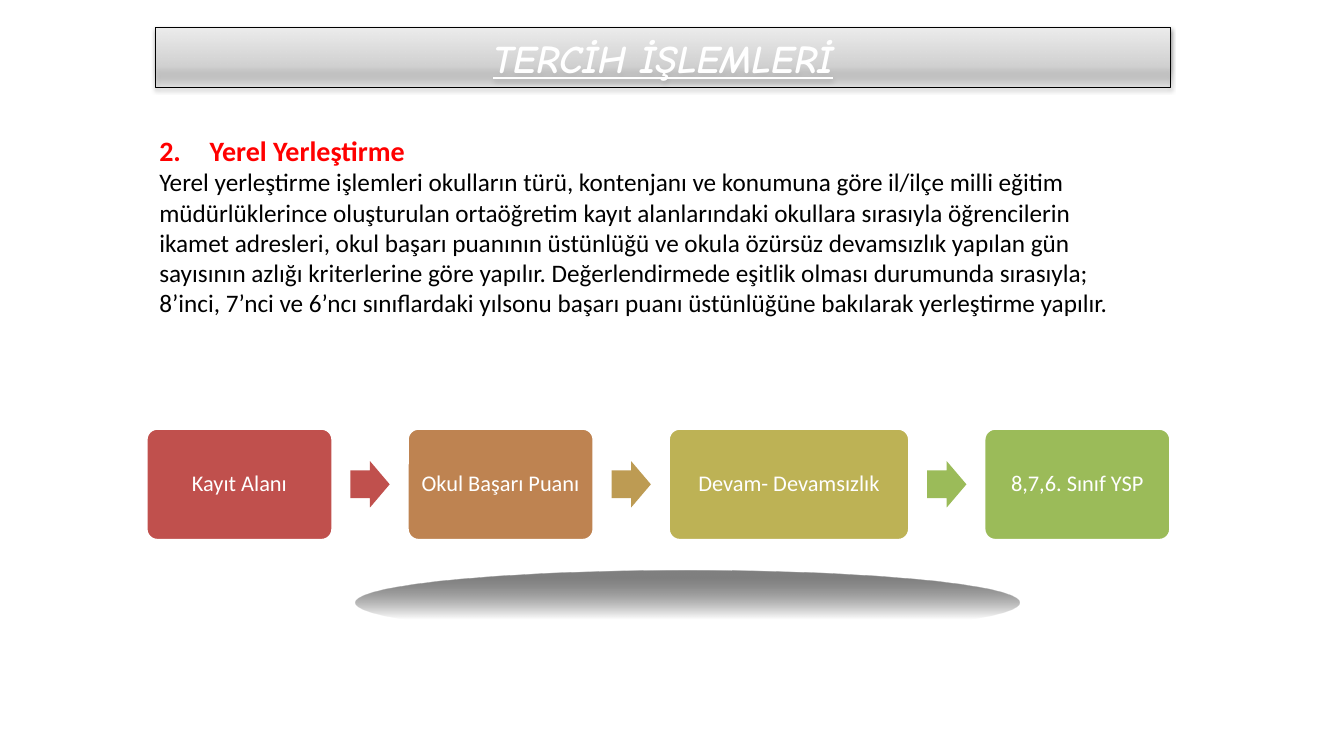
from dataclasses import dataclass

from pptx import Presentation
from pptx.dml.color import RGBColor
from pptx.enum.shapes import MSO_SHAPE
from pptx.enum.text import MSO_ANCHOR, MSO_AUTO_SIZE, PP_ALIGN
from pptx.oxml import parse_xml
from pptx.oxml.ns import nsdecls
from pptx.util import Inches, Pt

ROUND = MSO_SHAPE.ROUNDED_RECTANGLE
ARROW = MSO_SHAPE.RIGHT_ARROW
OVAL = MSO_SHAPE.OVAL
CENTER, LEFT = PP_ALIGN.CENTER, PP_ALIGN.LEFT
MIDDLE, TOP = MSO_ANCHOR.MIDDLE, MSO_ANCHOR.TOP
FIXED = MSO_AUTO_SIZE.NONE

HEADING = "Yerel Yerleştirme"
DETAIL = (
    "Yerel yerleştirme işlemleri okulların türü, kontenjanı ve konumuna göre "
    "il/ilçe milli eğitim müdürlüklerince oluşturulan ortaöğretim kayıt "
    "alanlarındaki okullara sırasıyla öğrencilerin ikamet adresleri, okul başarı "
    "puanının üstünlüğü ve okula özürsüz devamsızlık yapılan gün sayısının azlığı "
    "kriterlerine göre yapılır. Değerlendirmede eşitlik olması durumunda sırasıyla; "
    "8’inci, 7’nci ve 6’ncı sınıflardaki yılsonu başarı puanı üstünlüğüne "
    "bakılarak yerleştirme yapılır."
)
# label, width, box colour, colour of the arrow that follows
STEPS = [
    ("Kayıt Alanı", 1.85, "C0504D", "C0504D"),
    ("Okul Başarı Puanı", 1.85, "BE8351", "BD9B53"),
    ("Devam- Devamsızlık", 2.39, "BDB255", "9BBB59"),
    ("8,7,6. Sınıf YSP", 1.85, "9BBB59", None),
]


@dataclass(frozen=True)
class Theme:
    font: str = "Calibri"
    fancy: str = "Comic Neue"
    white: str = "FFFFFF"
    black: str = "000000"
    red: str = "FF0000"
    title: int = 28
    head: int = 20
    text: int = 18
    label: int = 16
    # gradient stops: position, colour, opacity in percent
    banner: tuple = ((0, "BDBDBD", 7), (35, "D1D1D1", 100), (100, "EEEEEE", 100))
    glow: tuple = ((11, "808080", 100), (76, "2B2B2B", 0))


def rgb(code):
    return RGBColor.from_string(code)


def node(tag, attrs="", inner=""):
    return parse_xml(f'<a:{tag} {nsdecls("a")} {attrs}>{inner}</a:{tag}>')


def blend(shape, stops, angle):
    """Fill the shape with a linear gradient."""
    shape.fill.gradient()
    marks = "".join(
        f'<a:gs pos="{pos * 1000}"><a:srgbClr val="{code}">'
        f'<a:alpha val="{solid * 1000}"/></a:srgbClr></a:gs>'
        for pos, code, solid in stops
    )
    fill = node(
        "gradFill", 'rotWithShape="1"',
        f'<a:gsLst>{marks}</a:gsLst><a:lin ang="{angle * 60000}" scaled="0"/>',
    )
    props = shape._element.spPr
    props.replace(props.find(fill.tag), fill)


class Board:
    def __init__(self, slide, theme):
        self.slide, self.theme = slide, theme

    def place(self, shape, left, top, width, height):
        shape.left, shape.top = Inches(left), Inches(top)
        shape.width, shape.height = Inches(width), Inches(height)

    def style(self, para, size, color, font=None, bold=False, align=LEFT):
        para.alignment = align
        para.font.name = font or self.theme.font
        para.font.size = Pt(size)
        para.font.bold = bold
        para.font.color.rgb = rgb(color)

    def title(self, text, *area):
        """Turn the title placeholder into a shaded, rounded banner."""
        look = self.theme
        shape = self.slide.shapes.title
        self.place(shape, *area)
        props = shape._element.spPr
        props.insert(1, node("prstGeom", 'prst="roundRect"', "<a:avLst/>"))
        blend(shape, look.banner, 270)
        shape.line.color.rgb = rgb(look.black)
        shape.line.width = Pt(0.75)
        props.append(node(
            "effectLst", "",
            f'<a:outerShdw blurRad="{Pt(3.1)}" dist="{Pt(1.6)}" dir="5400000" '
            f'rotWithShape="0"><a:srgbClr val="{look.black}">'
            '<a:alpha val="38000"/></a:srgbClr></a:outerShdw>',
        ))
        frame = shape.text_frame
        frame.text = text
        frame.auto_size = FIXED
        frame.vertical_anchor = MIDDLE
        para = frame.paragraphs[0]
        self.style(para, look.title, look.white, look.fancy, True, CENTER)
        para.font.italic = para.font.underline = True

    def body(self, head, text, *area):
        look = self.theme
        shape = self.slide.placeholders[1]
        self.place(shape, *area)
        frame = shape.text_frame
        frame.text = f"{head}\n{text}"
        frame.auto_size = FIXED
        frame.vertical_anchor = TOP
        first, second = frame.paragraphs
        self.style(first, look.head, look.red, bold=True)
        self.style(second, look.text, look.black)
        number = node("buAutoNum", 'type="arabicPeriod" startAt="2"')
        for para, mark, indent in ((first, number, 0.5), (second, node("buNone"), 0)):
            para.space_before = Pt(0)
            props = para._p.pPr
            props.set("marL", str(Inches(indent)))
            props.set("indent", str(Inches(-indent)))
            props.find(node("defRPr").tag).addprevious(mark)

    def shape(self, kind, left, top, width, height, color=None, adjust=()):
        item = self.slide.shapes.add_shape(
            kind, Inches(left), Inches(top), Inches(width), Inches(height)
        )
        item.shadow.inherit = False
        item.line.fill.background()
        for spot, value in enumerate(adjust):
            item.adjustments[spot] = value
        if color:
            item.fill.solid()
            item.fill.fore_color.rgb = rgb(color)
        return item

    def oval(self, *area):
        blend(self.shape(OVAL, *area), self.theme.glow, 90)

    def box(self, text, color, *area):
        look = self.theme
        item = self.shape(ROUND, *area, color, (0.1,))
        item.line.color.rgb = rgb(look.white)
        item.line.width = Pt(2)
        frame = item.text_frame
        frame.text = text
        frame.word_wrap = True
        frame.vertical_anchor = MIDDLE
        frame.margin_left = frame.margin_right = Inches(0.07)
        frame.margin_top = frame.margin_bottom = Inches(0.07)
        para = frame.paragraphs[0]
        para.line_spacing = 0.9
        self.style(para, look.label, look.white, align=CENTER)

    def chain(self, steps, left, top, height, gap):
        """Lay out the boxes in a row, with an arrow in each gap."""
        wide, tall = 0.39, 0.46
        for text, width, color, tint in steps:
            self.box(text, color, left, top, width, height)
            left += width
            if tint:
                self.shape(ARROW, left + (gap - wide) / 2, top + (height - tall) / 2,
                           wide, tall, tint, (0.6, 0.5))
            left += gap


def main():
    deck = Presentation()
    deck.slide_width, deck.slide_height = Inches(13.33), Inches(7.5)
    board = Board(deck.slides.add_slide(deck.slide_layouts[1]), Theme())
    board.oval(3.53, 5.66, 6.58, 0.63)
    board.title("TERCİH İŞLEMLERİ", 1.54, 0.27, 10.07, 0.6)
    board.body(HEADING, DETAIL, 1.48, 1.27, 9.93, 2.59)
    board.chain(STEPS, 1.45, 4.25, 1.11, 0.74)
    deck.save("out.pptx")


if __name__ == "__main__":
    main()
